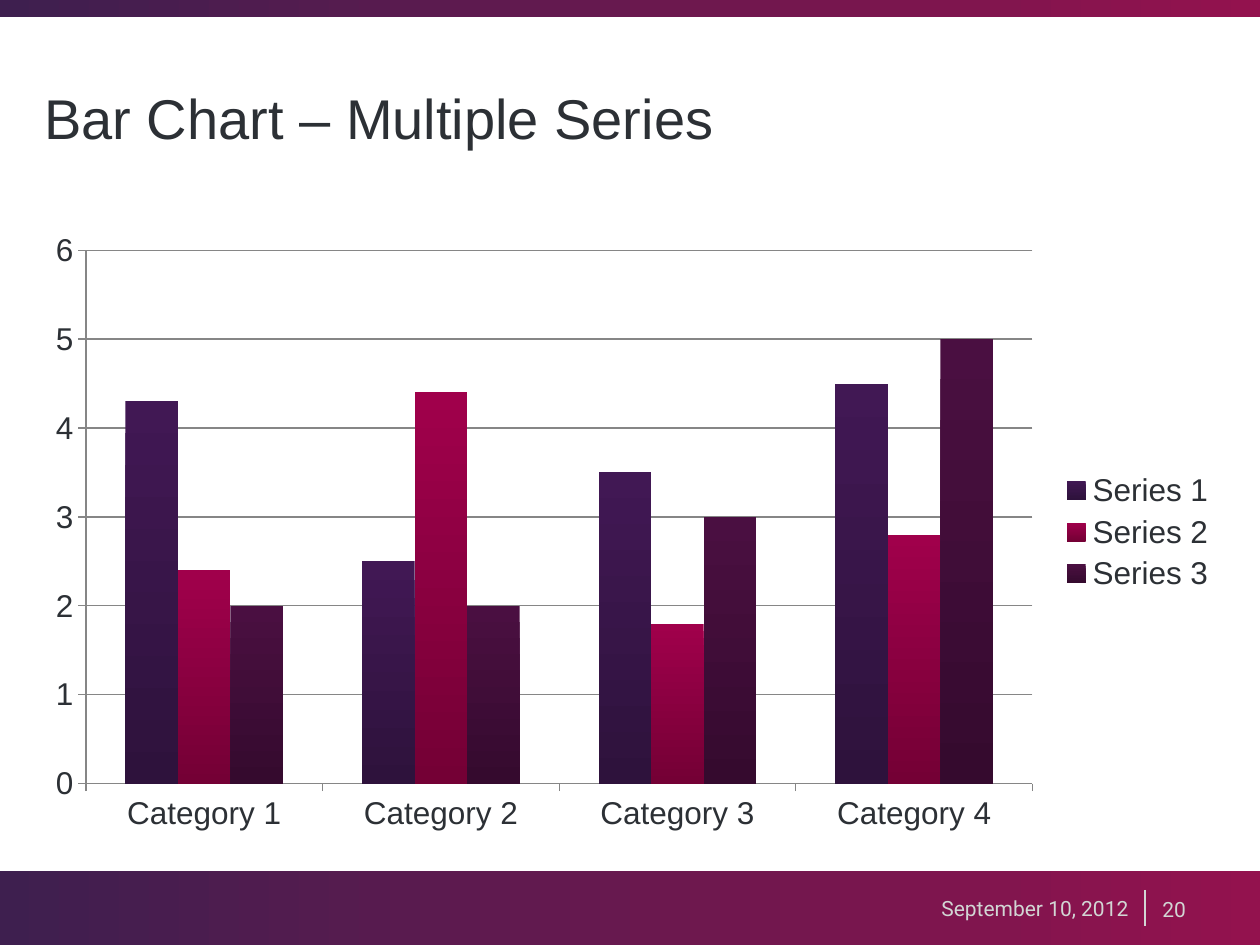
import pptx
import pptx.chart.data
import pptx.dml.color
import pptx.enum.chart
import pptx.enum.shapes
import pptx.enum.text
import pptx.oxml
import pptx.util

PX_PER_INCH = 126
WIDTH, HEIGHT = 1260, 945
INK, PALE, GRID = "2C3035", "D2D6D4", "868686"
BAND_COLORS = ("3E1F4F", "93124E")

CATEGORIES = ["Category 1", "Category 2", "Category 3", "Category 4"]
# name, values, top colour, bottom colour
SERIES = [
    ("Series 1", (4.3, 2.5, 3.5, 4.5), "411854", "2E123C"),
    ("Series 2", (2.4, 4.4, 1.8, 2.8), "A0004B", "740035"),
    ("Series 3", (2, 2, 3, 5), "4A0F41", "350A2E"),
]


def px(length):
    return pptx.util.Emu(round(length * 914400 / PX_PER_INCH))


def color(value):
    return pptx.dml.color.RGBColor.from_string(value)


def fill_gradient(fill, colors, angle):
    fill.gradient()
    fill.gradient_angle = angle
    for stop, value, position in zip(fill.gradient_stops, colors, (0, 1)):
        stop.color.rgb = color(value)
        stop.position = position


def style_font(font, name, size, value):
    font.name = name
    font.size = pptx.util.Pt(size)
    font.color.rgb = color(value)


def style_line(line, value, width):
    line.color.rgb = color(value)
    line.width = pptx.util.Pt(width)


def add_band(page, top, height):
    band = page.shapes.add_shape(
        pptx.enum.shapes.MSO_SHAPE.RECTANGLE,
        px(-1), px(top), px(WIDTH + 2), px(height))
    band.shadow.inherit = False
    fill_gradient(band.fill, BAND_COLORS, 0)
    band.line.fill.background()


def add_divider(page, x, top, bottom):
    divider = page.shapes.add_connector(
        pptx.enum.shapes.MSO_CONNECTOR.STRAIGHT, px(x), px(top), px(x), px(bottom))
    style_line(divider.line, PALE, 1)
    divider._element.spPr.append(pptx.oxml.parse_xml(
        '<a:effectLst xmlns:a="http://schemas.openxmlformats.org/drawingml/2006/main"/>'))


def add_text(page, text, bounds, font, size, value, align="LEFT"):
    box = page.shapes.add_textbox(*map(px, bounds))
    frame = box.text_frame
    frame.word_wrap = True
    frame.vertical_anchor = pptx.enum.text.MSO_ANCHOR.MIDDLE
    frame.margin_top = frame.margin_bottom = 0
    para = frame.paragraphs[0]
    para.alignment = getattr(pptx.enum.text.PP_ALIGN, align)
    span = para.add_run()
    span.text = text
    style_font(span.font, font, size, value)


def style_axis(axis):
    axis.major_tick_mark = pptx.enum.chart.XL_TICK_MARK.OUTSIDE
    axis.minor_tick_mark = pptx.enum.chart.XL_TICK_MARK.NONE
    style_line(axis.format.line, GRID, 0.75)


def add_column_chart(page, bounds):
    data = pptx.chart.data.CategoryChartData()
    data.categories = CATEGORIES
    for name, values, *_ in SERIES:
        data.add_series(name, values)
    chart = page.shapes.add_chart(
        pptx.enum.chart.XL_CHART_TYPE.COLUMN_CLUSTERED, *map(px, bounds), data).chart
    chart.has_title = False
    style_font(chart.font, "Arial", 18, INK)

    chart.has_legend = True
    chart.legend.position = pptx.enum.chart.XL_LEGEND_POSITION.RIGHT
    chart.legend.include_in_layout = False

    style_axis(chart.category_axis)
    value_axis = chart.value_axis
    style_axis(value_axis)
    value_axis.minimum_scale, value_axis.maximum_scale = 0, 6
    value_axis.major_unit = 1
    value_axis.tick_labels.number_format = "General"
    value_axis.tick_labels.number_format_is_linked = False
    value_axis.has_major_gridlines = True
    style_line(value_axis.major_gridlines.format.line, GRID, 0.75)

    plot = chart.plots[0]
    plot.vary_by_categories = False
    plot.gap_width = 150
    plot.overlap = 0
    for series, (_, _, *colors) in zip(plot.series, SERIES):
        fill_gradient(series.format.fill, colors, 270)


def main():
    deck = pptx.Presentation()
    deck.slide_width, deck.slide_height = px(WIDTH), px(HEIGHT)
    page = deck.slides.add_slide(deck.slide_layouts[6])

    add_band(page, 871, 76)
    add_band(page, -1, 18)
    add_divider(page, 1145, 890, 926)
    add_text(page, "Bar Chart – Multiple Series", (32, 38, 1197, 158), "Arial", 32, INK)
    add_text(page, "20", (1150, 871, 110, 76), "Roboto", 12, PALE)
    add_text(page, "September 10, 2012", (847, 870, 294, 77), "Roboto", 12, PALE, "RIGHT")
    add_column_chart(page, (32, 220, 1197, 624))

    deck.save("out.pptx")


if __name__ == "__main__":
    main()
